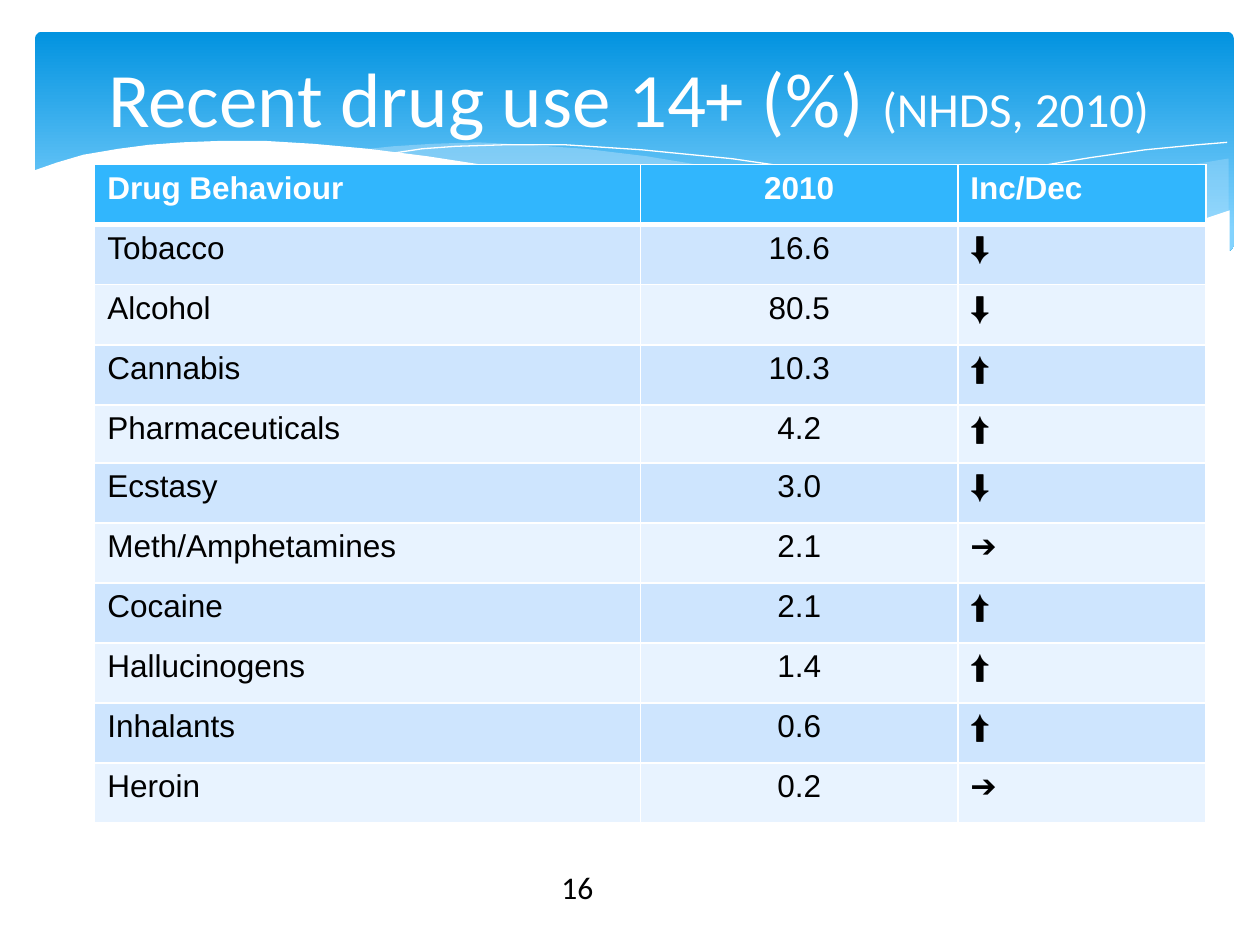
from dataclasses import dataclass
from typing import Optional

from lxml.etree import SubElement
from pptx import Presentation
from pptx.dml.color import RGBColor
from pptx.enum.shapes import MSO_SHAPE as Preset
from pptx.enum.text import MSO_ANCHOR as Anchor, PP_ALIGN as Align
from pptx.oxml.ns import qn
from pptx.util import Cm, Pt

COLORS = {
    "white": "FFFFFF",
    "black": "000000",
    "header": "31B6FD",
    "odd_row": "CEE5FE",
    "even_row": "E8F3FF",
    "banner_top": "0293E0",
    "banner_bottom": "83D3FE",
    "wave": "C6E7FC",
}
COLUMN_WIDTHS = (11, 6.4, 5)
ROW_HEIGHT, SHORT_ROW_HEIGHT = 1.21, 1.17
SHORT_ROW = "Pharmaceuticals"
HEADER = ("Drug Behaviour", "2010", "Inc/Dec")


@dataclass
class Wave:
    points: tuple
    fill: Optional[str] = None
    opacity: int = 100


@dataclass
class Run:
    text: str
    size: int
    color: str = "black"
    font: str = "Calibri"
    bold: bool = False


@dataclass
class Drug:
    name: str
    percent: str
    trend: str


WAVES = (
    Wave(((24.74, 3.2), (23.37, 3.43), (21.84, 3.73), (19.76, 4.17), (17.91, 4.5),
          (16.76, 4.65), (17.88, 4.8), (19.2, 4.9), (20.37, 4.93), (21.41, 4.93),
          (22.35, 4.83), (23.37, 4.67), (24.08, 4.47), (24.77, 4.27), (24.77, 3.2)),
         "wave", 29),
    Wave(((22.66, 4.83), (21.23, 4.65), (19.66, 4.42), (17.91, 4.09), (15.95, 3.68),
          (14.43, 3.38), (13.03, 3.15), (11.79, 3), (10.64, 2.92), (9.63, 2.87),
          (8.71, 2.9), (7.92, 2.95), (7.26, 3.02), (8.66, 3.18), (10.24, 3.45),
          (12.45, 3.91), (14.35, 4.29), (16.08, 4.57), (17.63, 4.78), (18.97, 4.9),
          (20.19, 4.95), (21.26, 4.95), (22, 4.9)),
         "wave", 40),
    Wave(((7.85, 3.1), (8.51, 3), (9.19, 2.95), (10.16, 2.92), (11.4, 2.92),
          (12.93, 3.02), (14.76, 3.2), (16.87, 3.51), (19.3, 3.94), (21.08, 4.34),
          (23.01, 4.8))),
    Wave(((15.57, 4.47), (16.56, 4.24), (17.63, 3.99), (18.97, 3.71), (20.45, 3.43),
          (21.97, 3.18), (23.09, 3.02), (24.13, 2.92), (24.74, 2.87))),
    Wave(((24.79, 4.24), (24.1, 4.47), (23.34, 4.65), (22.5, 4.8), (21.56, 4.88),
          (20.52, 4.93), (19.3, 4.88), (17.96, 4.78), (16.43, 4.6), (14.68, 4.32),
          (12.75, 3.94), (11.33, 3.66), (9.91, 3.35), (8.61, 3.15), (7.42, 3),
          (6.32, 2.9), (5.33, 2.84), (4.47, 2.84), (3.68, 2.87), (3, 2.92),
          (2.39, 3), (1.68, 3.12), (1.14, 3.28), (0.71, 3.43), (0.56, 3.51),
          (0.56, 6.1), (24.79, 6.1)),
         "white"),
)
DRUGS = (
    Drug("Tobacco", "16.6", "⬇"),
    Drug("Alcohol", "80.5", "⬇"),
    Drug("Cannabis", "10.3", "⬆"),
    Drug("Pharmaceuticals", "4.2", "⬆"),
    Drug("Ecstasy", "3.0", "⬇"),
    Drug("Meth/Amphetamines", "2.1", "➔"),
    Drug("Cocaine", "2.1", "⬆"),
    Drug("Hallucinogens", "1.4", "⬆"),
    Drug("Inhalants", "0.6", "⬆"),
    Drug("Heroin", "0.2", "➔"),
)


def rgb(name: str) -> RGBColor:
    return RGBColor.from_string(COLORS[name])


def add_runs(paragraph, runs: tuple, align: Align) -> None:
    paragraph.alignment = align
    for item in runs:
        run = paragraph.add_run()
        run.text = item.text
        run.font.name = item.font
        run.font.size = Pt(item.size)
        run.font.bold = item.bold
        run.font.color.rgb = rgb(item.color)


def add_text(slide, box: tuple, runs: tuple, align: Align = Align.LEFT,
             anchor: Anchor = Anchor.TOP) -> None:
    frame = slide.shapes.add_textbox(*map(Cm, box)).text_frame
    frame.word_wrap = True
    frame.vertical_anchor = anchor
    add_runs(frame.paragraphs[0], runs, align)


def add_banner(slide) -> None:
    box = (0.71, 0.64, 24.16, 4.42)
    shape = slide.shapes.add_shape(Preset.ROUNDED_RECTANGLE, *map(Cm, box))
    shape.adjustments[0] = 0.03
    shape.shadow.inherit = False
    shape.line.fill.background()
    shape.fill.gradient()
    shape.fill.gradient_angle = 270
    stops = (("banner_top", 0), ("banner_bottom", 0.9))
    for stop, (color, position) in zip(shape.fill.gradient_stops, stops):
        stop.color.rgb = rgb(color)
        stop.position = position


def add_wave(slide, wave: Wave) -> None:
    start, *others = [(Cm(x), Cm(y)) for x, y in wave.points]
    builder = slide.shapes.build_freeform(*start)
    builder.add_line_segments(others, close=wave.fill is not None)
    shape = builder.convert_to_shape()
    shape.shadow.inherit = False
    if wave.fill is None:
        shape.fill.background()
        shape.line.color.rgb = rgb("white")
        shape.line.width = Pt(0)
        return
    shape.line.fill.background()
    shape.fill.solid()
    shape.fill.fore_color.rgb = rgb(wave.fill)
    if wave.opacity < 100:
        color = shape.fill._xPr.find(".//" + qn("a:srgbClr"))
        SubElement(color, qn("a:alpha"), val=str(wave.opacity * 1000))


def style_cell(cell, fill: str, top: int, bottom: int) -> None:
    properties = cell._tc.get_or_add_tcPr()
    for side, width in (("L", 1), ("R", 1), ("T", top), ("B", bottom)):
        line = SubElement(properties, qn(f"a:ln{side}"), w=str(Pt(width)))
        solid = SubElement(line, qn("a:solidFill"))
        SubElement(solid, qn("a:srgbClr"), val=COLORS["white"])
    cell.fill.solid()
    cell.fill.fore_color.rgb = rgb(fill)


def add_drug_table(slide) -> None:
    rows = [HEADER] + [(drug.name, drug.percent, drug.trend) for drug in DRUGS]
    table = slide.shapes.add_table(
        len(rows), len(HEADER), Cm(1.91), Cm(3.32),
        Cm(sum(COLUMN_WIDTHS)), Cm(ROW_HEIGHT * len(rows))).table
    for column, width in zip(table.columns, COLUMN_WIDTHS):
        column.width = Cm(width)
    for index, values in enumerate(rows):
        is_header = index == 0
        height = SHORT_ROW_HEIGHT if values[0] == SHORT_ROW else ROW_HEIGHT
        table.rows[index].height = Cm(height)
        fill = "header" if is_header else "odd_row" if index % 2 else "even_row"
        for position, value in enumerate(values):
            cell = table.cell(index, position)
            style_cell(cell, fill, 3 if index == 1 else 1, 3 if is_header else 1)
            run = Run(value, 18, "white" if is_header else "black", "Arial", is_header)
            align = Align.CENTER if position == 1 else Align.LEFT
            add_runs(cell.text_frame.paragraphs[0], (run,), align)


def main() -> None:
    """Build the recent drug use slide and save it."""
    presentation = Presentation()
    presentation.slide_width, presentation.slide_height = Cm(25.4), Cm(19.05)
    slide = presentation.slides.add_slide(presentation.slide_layouts[6])
    add_banner(slide)
    for wave in WAVES:
        add_wave(slide, wave)
    add_drug_table(slide)
    title = (Run("Recent drug use 14+ (%) ", 44, "white"), Run("(NHDS, 2010)", 28, "white"))
    add_text(slide, (1.24, 0.58, 22.86, 2.74), title, Align.CENTER, Anchor.MIDDLE)
    add_text(slide, (11.07, 17.37, 3.23, 1.02), (Run("16", 18),))
    presentation.save("out.pptx")


if __name__ == "__main__":
    main()
